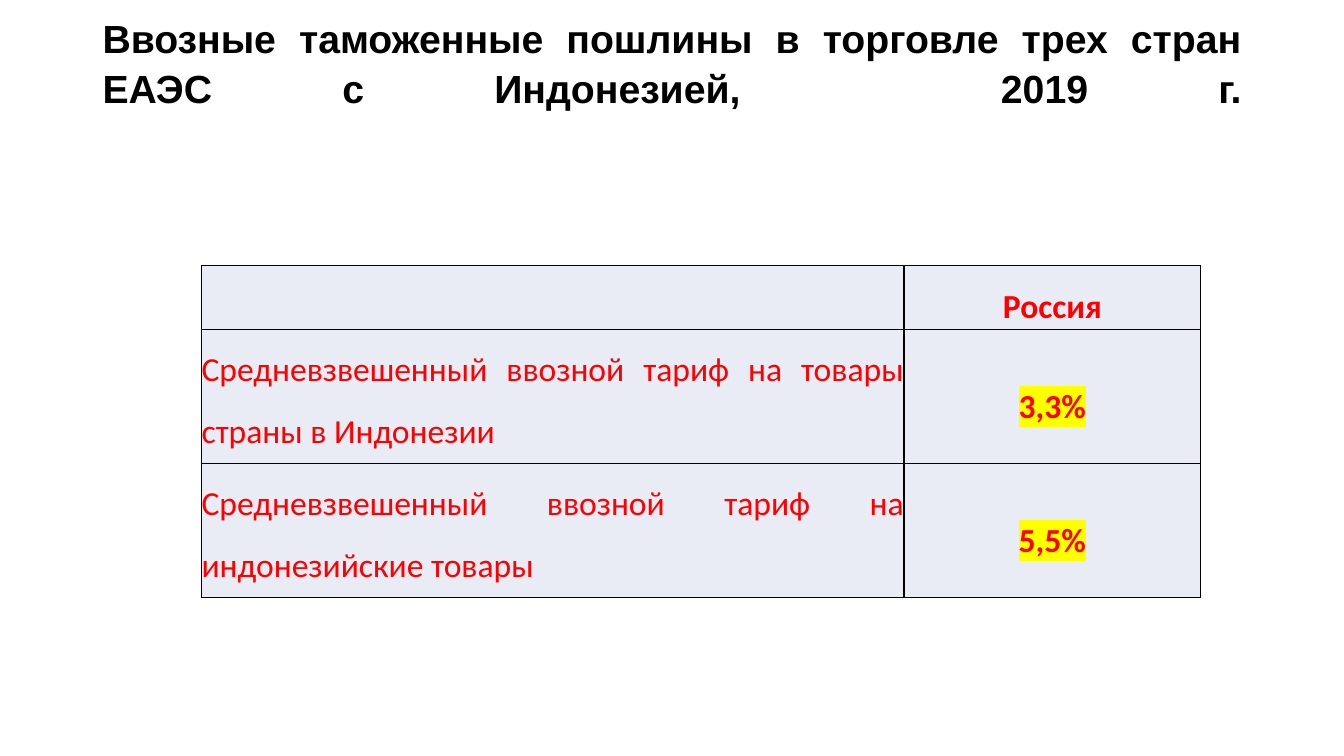
from dataclasses import dataclass

from lxml import etree
from pptx import Presentation
from pptx.dml.color import RGBColor
from pptx.enum.text import MSO_ANCHOR, PP_ALIGN
from pptx.oxml.ns import qn
from pptx.util import Cm, Pt

JUSTIFY, CENTER = PP_ALIGN.JUSTIFY, PP_ALIGN.CENTER
TOP, MIDDLE = MSO_ANCHOR.TOP, MSO_ANCHOR.MIDDLE
TITLE_ONLY = 5


@dataclass(frozen=True)
class Theme:
    black: str = "000000"
    red: str = "FF0000"
    yellow: str = "FFFF00"
    cell: str = "E9EBF5"
    title_font: str = "Arial"
    table_font: str = "Calibri"
    title_size: int = 28
    table_size: int = 24
    title_spacing: float = 1.07
    table_spacing: float = 1.5
    border: int = 1


THEME = Theme()

TITLE = "Ввозные таможенные пошлины в торговле трех стран ЕАЭС с Индонезией,  2019 г."
TARIFFS = [
    ("", "Россия"),
    ("Средневзвешенный ввозной тариф на товары страны в Индонезии", "3,3%"),
    ("Средневзвешенный ввозной тариф на индонезийские товары", "5,5%"),
]


def apply(target, values):
    for name, value in values.items():
        setattr(target, name, value)


def write(para, text, color, font, layout):
    apply(para, layout)
    span = para.add_run()
    span.text = text
    apply(span.font, font)
    span.font.color.rgb = RGBColor.from_string(color)
    return span


def add_color(parent, tag, color):
    holder = etree.SubElement(parent, qn(tag))
    etree.SubElement(holder, qn("a:srgbClr"), val=color)
    return holder


def highlight(span, color):
    properties = span.font._element
    mark = add_color(properties, "a:highlight", color)
    properties.find(qn("a:solidFill")).addnext(mark)


def draw_borders(cell):
    properties = cell._tc.get_or_add_tcPr()
    for position, side in enumerate(("a:lnL", "a:lnR", "a:lnT", "a:lnB")):
        line = etree.Element(qn(side), w=str(Pt(THEME.border)))
        add_color(line, "a:solidFill", THEME.black)
        properties.insert(position, line)


def add_title(page, left, top, width, height):
    box = page.shapes.title
    apply(box, {"left": left, "top": top, "width": width, "height": height})
    apply(box.text_frame, {"vertical_anchor": MIDDLE, "word_wrap": True})
    para = box.text_frame.paragraphs[0]
    font = {"name": THEME.title_font, "size": Pt(THEME.title_size), "bold": True}
    layout = {"alignment": JUSTIFY, "line_spacing": THEME.title_spacing}
    write(para, TITLE, THEME.black, font, layout)
    # The closing line break stretches the last line to full width
    para.add_line_break()
    para.font.size = Pt(THEME.title_size)


def fill_cell(cell, text, is_header, is_value):
    cell.fill.solid()
    cell.fill.fore_color.rgb = RGBColor.from_string(THEME.cell)
    draw_borders(cell)
    if not text:
        return
    apply(cell, dict.fromkeys(
        ("margin_left", "margin_top", "margin_right", "margin_bottom"), 0))
    is_rate = is_value and not is_header
    cell.vertical_anchor = MIDDLE if is_rate else TOP
    font = {"name": THEME.table_font, "size": Pt(THEME.table_size), "bold": is_value}
    layout = {"alignment": CENTER if is_value else JUSTIFY,
              "line_spacing": THEME.table_spacing}
    span = write(cell.text_frame.paragraphs[0], text, THEME.red, font, layout)
    if is_rate:
        highlight(span, THEME.yellow)


def add_tariff_table(page, left, top, width, height):
    frame = page.shapes.add_table(len(TARIFFS), 2, left, top, width, height)
    table = frame.table
    apply(table, {"first_row": False, "horz_banding": False})

    # Value column and header row are fixed, the rest shares what remains
    value_width, header_height = Cm(7.48), Cm(1.6)
    table.columns[0].width = width - value_width
    table.columns[1].width = value_width
    body_height = (height - header_height) // (len(TARIFFS) - 1)

    for row_index, texts in enumerate(TARIFFS):
        is_header = row_index == 0
        table.rows[row_index].height = header_height if is_header else body_height
        for column_index, text in enumerate(texts):
            fill_cell(table.cell(row_index, column_index), text,
                      is_header, column_index == 1)


def main():
    deck = Presentation()
    deck.slide_width, deck.slide_height = Cm(33.87), Cm(19.05)
    page = deck.slides.add_slide(deck.slide_layouts[TITLE_ONLY])
    add_title(page, Cm(2.33), Cm(0.38), Cm(29.21), Cm(3.5))
    add_tariff_table(page, Cm(5.08), Cm(6.7), Cm(25.18), Cm(8.36))
    deck.save("out.pptx")


if __name__ == "__main__":
    main()
